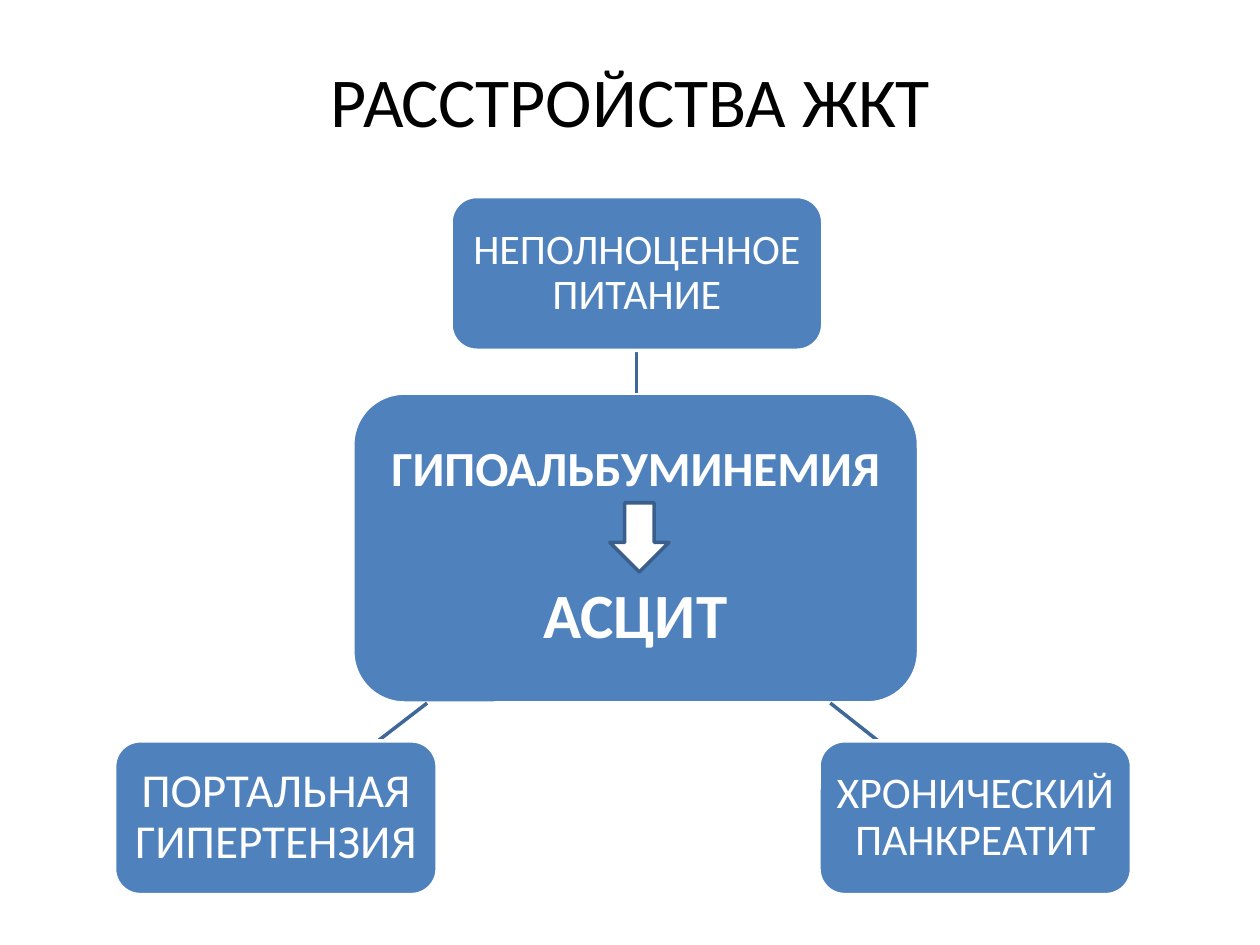
from dataclasses import dataclass
from lxml import etree
from pptx import Presentation
from pptx import util as u
from pptx.dml.color import RGBColor
from pptx.enum import shapes as sh, text as tx
from pptx.oxml.ns import qn

COLS, ROWS = 100, 75
WIDE, HIGH = u.Inches(10), u.Inches(7.5)
WHITE, BLUE, NAVY, STEEL = "FFFFFF", "4F81BD", "3F6797", "3A5F8C"
ROUND = sh.MSO_SHAPE.ROUNDED_RECTANGLE


@dataclass
class Line:
    """One paragraph with its size and the gap below it."""
    text: str
    size: int
    bold: bool = False
    gap: int = 0


@dataclass
class Box:
    """A filled shape on the grid, with its lines of text."""
    x: float
    y: float
    w: float
    h: float
    lines: tuple = ()
    form: int = ROUND
    fill: str = BLUE
    edge: str = WHITE
    pad: float = 0.05


@dataclass
class Link:
    """A straight line on the grid."""
    x1: float
    y1: float
    x2: float
    y2: float


CORE = Box(28, 31.2, 44.9, 24.6, (Line("ГИПОАЛЬБУМИНЕМИЯ", 28, True, 50),
                                  Line("АСЦИТ", 36, True)), pad=0.08)
CAUSES = (
    (Link(50.5, 31.2, 50.5, 27.8),
     Box(35.8, 15.6, 29.5, 12.2, (Line("НЕПОЛНОЦЕННОЕ ПИТАНИЕ", 24),))),
    (Link(65.9, 55.8, 69.7, 58.8),
     Box(65, 58.8, 24.8, 12.2, (Line("ХРОНИЧЕСКИЙ ПАНКРЕАТИТ", 25),))),
    (Link(33.9, 55.8, 30, 58.8),
     Box(9.1, 58.8, 25.6, 12.2, (Line("ПОРТАЛЬНАЯ ГИПЕРТЕНЗИЯ", 27),))),
)
ARROW = Box(48.4, 39.9, 4.7, 5.5, form=sh.MSO_SHAPE.DOWN_ARROW,
            fill=WHITE, edge=STEEL)


def col(n: float) -> int:
    """Turn grid columns into a length."""
    return round(WIDE * n / COLS)


def row(n: float) -> int:
    """Turn grid rows into a length."""
    return round(HIGH * n / ROWS)


def put(obj, vals: dict) -> None:
    """Set every attribute named in the dict."""
    for key, val in vals.items():
        setattr(obj, key, val)


def paint(fmt, tint: str) -> None:
    """Make a fill solid in a hex colour."""
    fmt.solid()
    fmt.fore_color.rgb = RGBColor.from_string(tint)


def stroke(line, tint: str) -> None:
    """Give a line its colour and width."""
    paint(line.fill, tint)
    line.width = u.Pt(2)


def write(par, item: Line, tint: str) -> None:
    """Fill a centred paragraph with one line."""
    put(par, {"text": item.text, "alignment": tx.PP_ALIGN.CENTER,
              "line_spacing": 0.9, "space_after": u.Pt(item.gap)})
    font = par.runs[0].font
    put(font, {"name": "Calibri", "size": u.Pt(item.size), "bold": item.bold})
    paint(font.fill, tint)


def draw(slide, box: Box) -> None:
    """Draw a box and its text."""
    shape = slide.shapes.add_shape(box.form, col(box.x), row(box.y),
                                   col(box.w), row(box.h))
    shape.shadow.inherit = False
    paint(shape.fill, box.fill)
    stroke(shape.line, box.edge)
    frame = shape.text_frame
    put(frame, {"word_wrap": True, "vertical_anchor": tx.MSO_ANCHOR.MIDDLE})
    put(frame, {f"margin_{side}": u.Inches(box.pad)
                for side in ("left", "top", "right", "bottom")})
    for num, item in enumerate(box.lines):
        par = frame.add_paragraph() if num else frame.paragraphs[0]
        write(par, item, WHITE)


def join(slide, link: Link) -> None:
    """Draw a plain link without a shadow."""
    wire = slide.shapes.add_connector(sh.MSO_CONNECTOR.STRAIGHT,
                                      col(link.x1), row(link.y1),
                                      col(link.x2), row(link.y2))
    stroke(wire.line, NAVY)
    etree.SubElement(wire._element.spPr, qn("a:effectLst"))


def main() -> None:
    """Build and save the slide."""
    deck = Presentation()
    put(deck, {"slide_width": WIDE, "slide_height": HIGH})
    slide = deck.slides.add_slide(deck.slide_layouts[5])
    title = slide.shapes.title
    put(title, {"left": col(5), "top": row(2.1),
                "width": col(90), "height": row(12.5)})
    title.text_frame.vertical_anchor = tx.MSO_ANCHOR.MIDDLE
    write(title.text_frame.paragraphs[0], Line("РАССТРОЙСТВА ЖКТ", 40), "000000")
    draw(slide, CORE)
    for link, box in CAUSES:
        join(slide, link)
        draw(slide, box)
    draw(slide, ARROW)
    deck.save("out.pptx")


if __name__ == "__main__":
    main()
